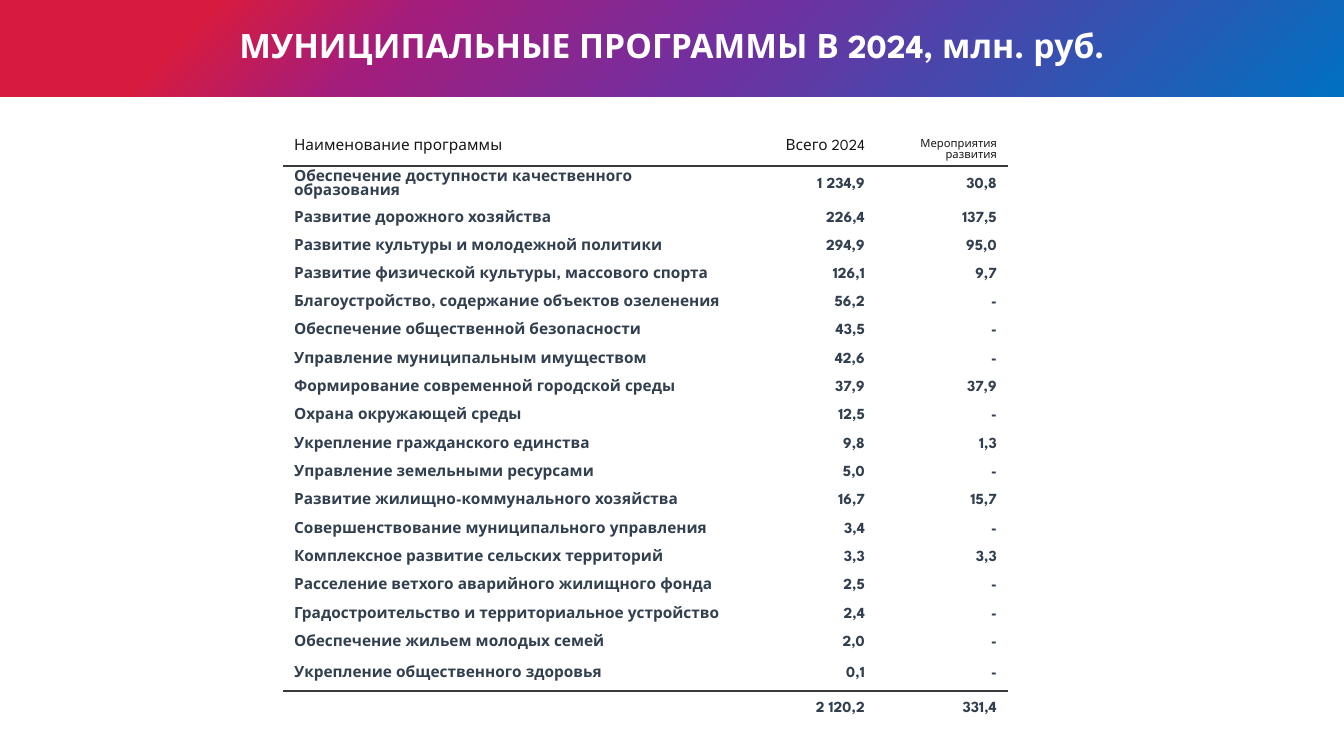
from lxml import etree
from pptx import Presentation
from pptx.dml.color import RGBColor
from pptx.enum.text import MSO_ANCHOR, MSO_AUTO_SIZE, PP_ALIGN
from pptx.oxml import parse_xml
from pptx.oxml.ns import nsdecls, qn
from pptx.util import Emu, Pt

FONT = "League Spartan"
WHITE = RGBColor(0xFF, 0xFF, 0xFF)
HEADER_INK = RGBColor(0x17, 0x16, 0x16)
BODY_INK = RGBColor(0x32, 0x3F, 0x4F)
RULE = RGBColor(0x3A, 0x38, 0x38)
BANNER_STOPS = [
    (0, RGBColor(0x00, 0x70, 0xC0)),
    (46, RGBColor(0x70, 0x30, 0xA0)),
    (70, RGBColor(0xA3, 0x1D, 0x7D)),
    (85, RGBColor(0xD7, 0x1B, 0x3F)),
    (100, RGBColor(0xD7, 0x1B, 0x3F)),
]

PROGRAMS = [
    ("Наименование программы", "Всего 2024", "Мероприятия развития"),
    ("Обеспечение доступности качественного образования", "1 234,9", "30,8"),
    ("Развитие дорожного хозяйства", "226,4", "137,5"),
    ("Развитие культуры и молодежной политики", "294,9", "95,0"),
    ("Развитие физической культуры, массового спорта", "126,1", "9,7"),
    ("Благоустройство, содержание объектов озеленения", "56,2", "-"),
    ("Обеспечение общественной безопасности", "43,5", "-"),
    ("Управление муниципальным имуществом", "42,6", "-"),
    ("Формирование современной городской среды", "37,9", "37,9"),
    ("Охрана окружающей среды", "12,5", "-"),
    ("Укрепление гражданского единства", "9,8", "1,3"),
    ("Управление земельными ресурсами", "5,0", "-"),
    ("Развитие жилищно-коммунального хозяйства", "16,7", "15,7"),
    ("Совершенствование муниципального управления", "3,4", "-"),
    ("Комплексное развитие сельских территорий", "3,3", "3,3"),
    ("Расселение ветхого аварийного жилищного фонда", "2,5", "-"),
    ("Градостроительство и территориальное устройство", "2,4", "-"),
    ("Обеспечение жильем молодых семей", "2,0", "-"),
    ("Укрепление общественного здоровья", "0,1", "-"),
    ("", "2 120,2", "331,4"),
]
TOTAL_ROW = len(PROGRAMS) - 1
COLUMN_WIDTHS = [459, 132, 132]
# Ordinary rows average 28 1/3 px, so every third one is a pixel taller.
ROW_HEIGHTS = [39, 37] + [28 + (i % 3 == 2) for i in range(16)] + [34, 36]


def px(length):
    return Emu(round(length * 914400 / 100.8))


def add_rule(cell, edge):
    """Draw a 1 pt line on one edge of the cell: lnT or lnB."""
    line = etree.SubElement(cell._tc.get_or_add_tcPr(), qn(f"a:{edge}"), w=str(Pt(1)))
    fill = etree.SubElement(line, qn("a:solidFill"))
    etree.SubElement(fill, qn("a:srgbClr"), val=str(RULE))


deck = Presentation()
deck.slide_width, deck.slide_height = px(1344), px(756)
page = deck.slides.add_slide(deck.slide_layouts[5])

# Banner with the title
banner = page.shapes.title
banner.left, banner.top, banner.width, banner.height = px(0), px(-1), px(1344), px(98)
stops = "".join(
    f'<a:gs pos="{position * 1000}"><a:srgbClr val="{color}"/></a:gs>'
    for position, color in BANNER_STOPS
)
banner._element.spPr.append(parse_xml(
    f'<a:gradFill {nsdecls("a")} rotWithShape="1"><a:gsLst>{stops}</a:gsLst>'
    '<a:path path="circle"><a:fillToRect l="100000" t="100000"/></a:path></a:gradFill>'
))
frame = banner.text_frame
frame.text = "МУНИЦИПАЛЬНЫЕ ПРОГРАММЫ В 2024, млн. руб."
frame.word_wrap = True
frame.auto_size = MSO_AUTO_SIZE.NONE
frame.vertical_anchor = MSO_ANCHOR.MIDDLE
para = frame.paragraphs[0]
para.alignment = PP_ALIGN.CENTER
para.line_spacing = 0.9
para.font.name, para.font.size, para.font.bold = FONT, Pt(24), True
para.font.color.rgb = WHITE

# Table of programs
table = page.shapes.add_table(
    len(PROGRAMS), len(COLUMN_WIDTHS),
    px(284), px(127), px(sum(COLUMN_WIDTHS)), px(sum(ROW_HEIGHTS)),
).table
table.first_row = table.horz_banding = False
for column, width in zip(table.columns, COLUMN_WIDTHS):
    column.width = px(width)
for row, height in zip(table.rows, ROW_HEIGHTS):
    row.height = px(height)

for r, program in enumerate(PROGRAMS):
    for c, text in enumerate(program):
        cell = table.cell(r, c)
        small = r == 0 and c == 2
        if r in (0, TOTAL_ROW - 1):
            add_rule(cell, "lnB")
        elif r in (1, TOTAL_ROW):
            add_rule(cell, "lnT")
        cell.fill.solid()
        cell.fill.fore_color.rgb = WHITE
        cell.vertical_anchor = MSO_ANCHOR.BOTTOM if small else MSO_ANCHOR.MIDDLE
        cell.text = text
        para = cell.text_frame.paragraphs[0]
        para.alignment = PP_ALIGN.RIGHT if c else PP_ALIGN.LEFT
        para.font.name = FONT
        para.font.size = Pt(8 if small else 11)
        para.font.bold = r > 0
        para.font.color.rgb = BODY_INK if r else HEADER_INK

deck.save("out.pptx")
